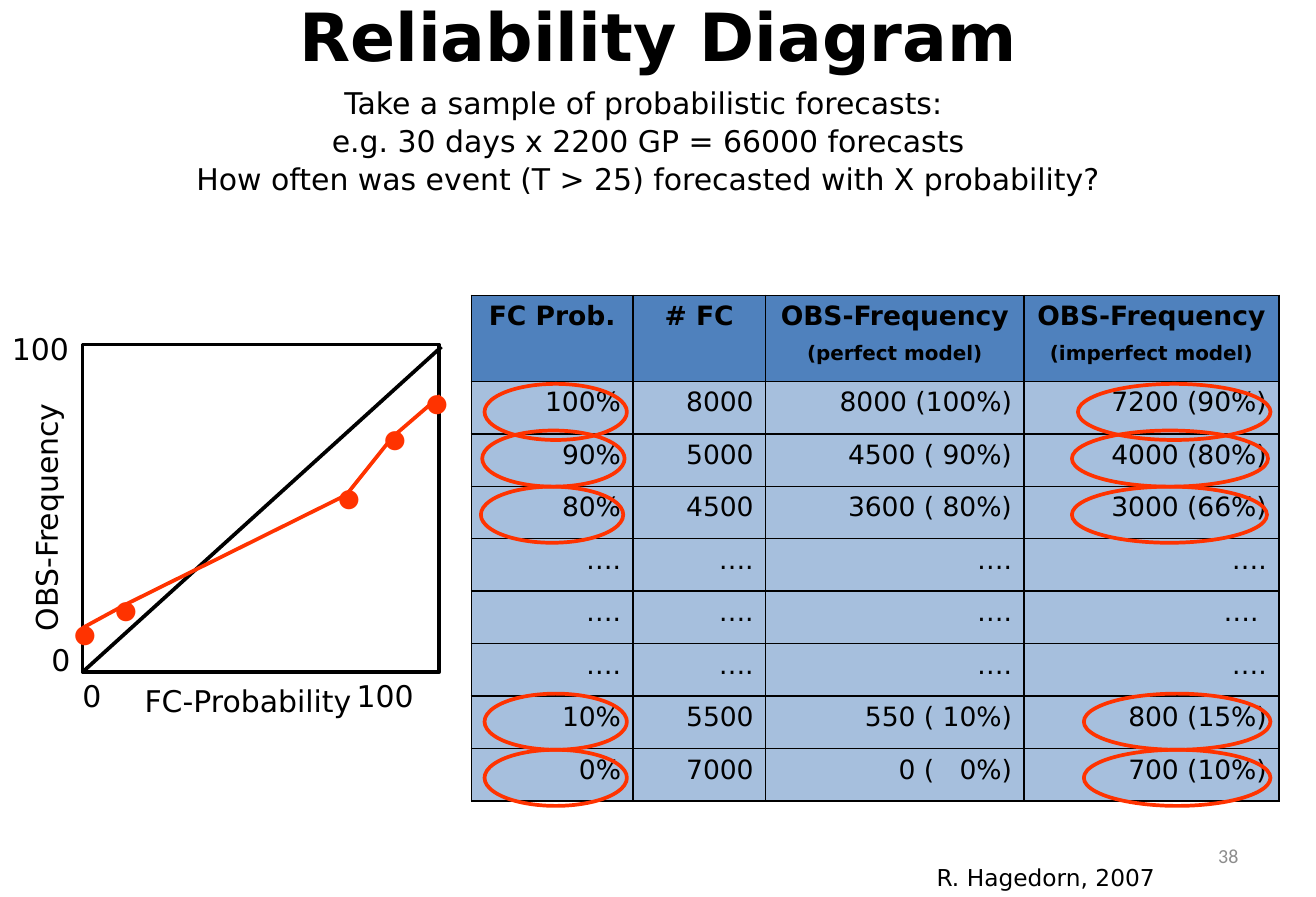
"""Build a slide that explains the reliability diagram with a plot and a forecast table."""
from lxml import etree
from pptx import Presentation
from pptx.dml.color import RGBColor
from pptx.enum.shapes import MSO_CONNECTOR, MSO_SHAPE
from pptx.enum.text import MSO_ANCHOR, PP_ALIGN
from pptx.oxml import parse_xml
from pptx.oxml.ns import nsdecls, qn
from pptx.util import Pt

LEFT, MID, RIGHT = PP_ALIGN.LEFT, PP_ALIGN.CENTER, PP_ALIGN.RIGHT
TOP, CENTER = MSO_ANCHOR.TOP, MSO_ANCHOR.MIDDLE
RECT, OVAL = MSO_SHAPE.RECTANGLE, MSO_SHAPE.OVAL
LINE = MSO_CONNECTOR.STRAIGHT
SANS = "DejaVu Sans"
INK = {"black": "000000", "red": "FF3300", "blue": "4F81BD", "gray": "8C8C8C"}


def write(frame, text, size=18, small=None, font=SANS, ink="black", bold=False,
          align=LEFT, gap=0, lead=None):
    for i, line in enumerate(text.split("\n")):
        para = frame.paragraphs[0] if i == 0 else frame.add_paragraph()
        para.alignment = align
        para.space_before = Pt(gap if i else 0)
        if lead:
            para.line_spacing = lead
        run = para.add_run()
        run.text = line
        run.font.size = Pt(small if i and small else size)
        run.font.name = font
        run.font.bold = bold
        run.font.color.rgb = RGBColor.from_string(INK[ink])


def trace(line, ink):
    line.color.rgb = RGBColor.from_string(INK[ink])
    line.width = Pt(2.25)


deck = Presentation()
deck.slide_width, deck.slide_height = Pt(792), Pt(540)
slide = deck.slides.add_slide(deck.slide_layouts[5])
shapes = slide.shapes

title = shapes.title
title.left, title.top, title.width, title.height = Pt(39.6), Pt(-24), Pt(712.8), Pt(90)
title.text_frame.vertical_anchor = CENTER
write(title.text_frame, "Reliability Diagram", size=40, bold=True, align=MID)

heads = ["FC Prob.", "# FC", "OBS-Frequency\n(perfect model)", "OBS-Frequency\n(imperfect model)"]
dots = ["…."] * 4
rows = [
    heads,
    ["100%", "8000", "8000 (100%)", "7200 (90%)"],
    ["90%", "5000", "4500 ( 90%)", "4000 (80%)"],
    ["80%", "4500", "3600 ( 80%)", "3000 (66%)"],
    dots,
    dots[:3] + ["…. "],
    dots,
    ["10%", "5500", "550 ( 10%)", "800 (15%)"],
    ["0%", "7000", "0 (   0%)", "700 (10%)"],
]
wide = [97.2, 79.9, 155.5, 153.4]
tall = [51.8] + [31.6] * 8
table = shapes.add_table(len(rows), len(wide), Pt(283.7), Pt(177.8),
                         Pt(sum(wide)), Pt(sum(tall))).table
table.first_row = table.horz_banding = False
for col, width in zip(table.columns, wide):
    col.width = Pt(width)
for r, row in enumerate(rows):
    table.rows[r].height = Pt(tall[r])
    for c, text in enumerate(row):
        cell = table.cell(r, c)
        write(cell.text_frame, text, size=16, small=12, bold=r == 0, gap=6,
              align=RIGHT if r else MID)
        cell.fill.solid()
        cell.fill.fore_color.rgb = RGBColor.from_string(INK["blue"])
        props = cell._tc.get_or_add_tcPr()
        if r:
            tint = props.find(".//" + qn("a:srgbClr"))
            etree.SubElement(tint, qn("a:alpha"), val="50000")
        for i, side in enumerate(["lnL", "lnR", "lnT", "lnB"]):
            props.insert(i, parse_xml(
                f'<a:{side} {nsdecls("a")} w="12700"><a:solidFill>'
                f'<a:srgbClr val="{INK["black"]}"/></a:solidFill></a:{side}>'))

rings = [
    (290.2, 259.2, 645.1, 118),
    (289.4, 293, 645.1, 117.4),
    (291.6, 417.6, 652.3, 112.3),
    (291.6, 451.4, 652.3, 112.3),
    (291.6, 231.1, 648.7, 115.9),
]
marks = [(RECT, 49.7, 207.4, 214.6, 197.3, "black")]
for prob, top, freq, width in rings:
    marks += [(OVAL, prob, top, 85.7, 33.8, "red"), (OVAL, freq, top, width, 33.8, "red")]
for kind, x, y, w, h, ink in marks:
    mark = shapes.add_shape(kind, Pt(x), Pt(y), Pt(w), Pt(h))
    mark.shadow.inherit = False
    mark.fill.background()
    trace(mark.line, ink)

curve = [
    (49.7, 404.6, 265.7, 208.8, "black"),
    (265, 238.3, 234, 265, "red"),
    (237.6, 261.4, 209.5, 296.6, "red"),
    (208.1, 298.1, 73.4, 365, "red"),
    (74.9, 364.3, 49.7, 378, "red"),
]
for x1, y1, x2, y2, ink in curve:
    link = shapes.add_connector(LINE, Pt(x1), Pt(y1), Pt(x2), Pt(y2))
    trace(link.line, ink)
    etree.SubElement(link._element.spPr, qn("a:effectLst"))

intro = ("Take a sample of probabilistic forecasts: \n"
         "e.g. 30 days x 2200 GP = 66000 forecasts\n"
         "How often was event (T > 25) forecasted with X probability?")
labels = [
    (intro, 105.8, 54, 568.8, 72.7, 0, TOP, dict(align=MID, gap=9, lead=0.65)),
    ("38", 567.4, 500.4, 185, 28.8, 0, CENTER,
     dict(size=12, font="Calibri", ink="gray", align=RIGHT)),
    ("R. Hagedorn, 2007", 556.6, 516.2, 149, 24.5, 0, TOP, dict(size=14)),
    ("OBS-Frequency", -49.7, 295.2, 154.8, 28.8, 270, TOP, {}),
    ("FC-Probability", 79.9, 407.5, 141.1, 28.8, 0, TOP, {}),
    ("100", 0, 195.8, 49, 28.8, 0, TOP, {}),
    ("0", 23.8, 383, 25.9, 28.8, 0, TOP, {}),
    ("0", 42.5, 404.6, 25.9, 28.8, 0, TOP, {}),
    ("100", 207.5, 404.6, 49, 28.8, 0, TOP, {}),
]
spots = [(222.5, 238.3), (195.1, 273.6), (60.5, 341.3), (36, 355.7), (247.7, 216.7)]
style = dict(size=32, font="TeX Gyre Adventor", ink="red")
labels += [("•", x, y, 25.9, 45.4, 0, TOP, style) for x, y in spots]
for text, x, y, w, h, turn, anchor, form in labels:
    box = shapes.add_textbox(Pt(x), Pt(y), Pt(w), Pt(h))
    box.rotation = turn
    box.text_frame.word_wrap = False
    box.text_frame.vertical_anchor = anchor
    write(box.text_frame, text, **form)

deck.save("out.pptx")
